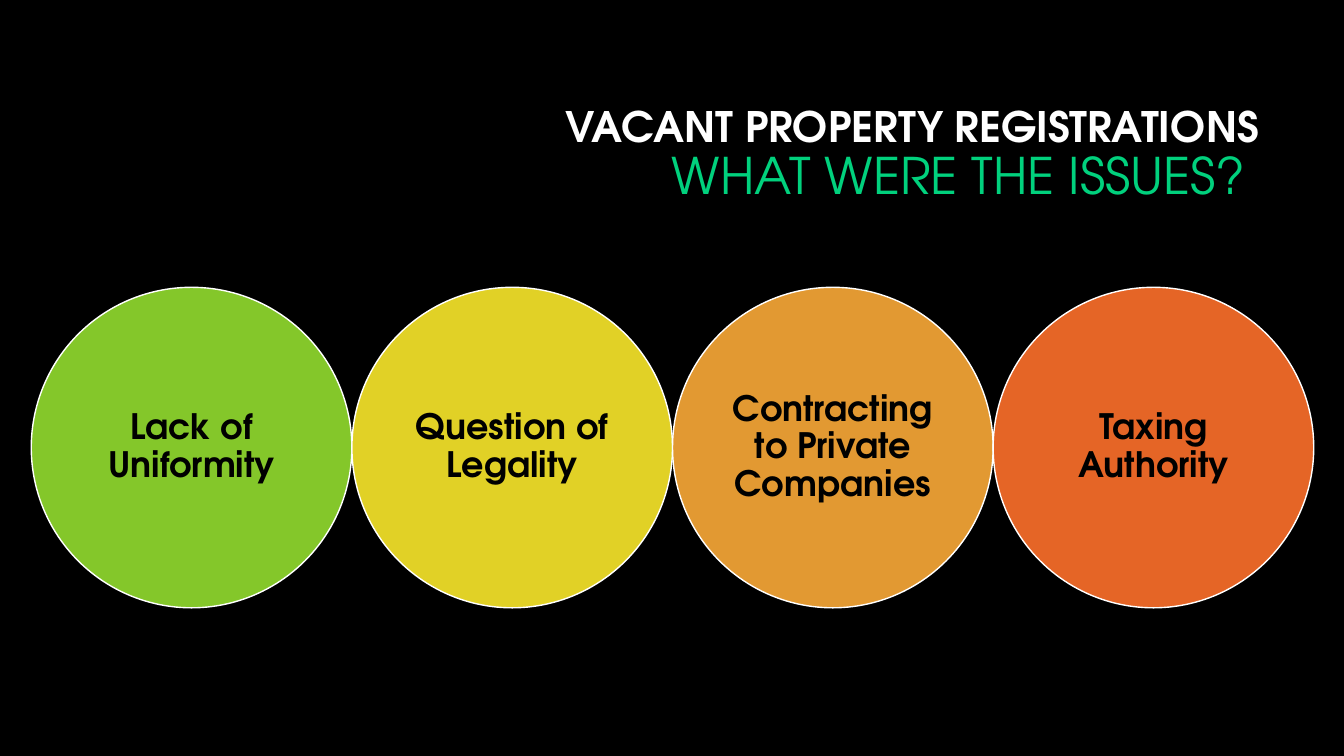
"""Build the slide on the issues with vacant property registrations."""
from pptx import Presentation
from pptx.dml.color import RGBColor
from pptx.enum import shapes, text
from pptx.util import Inches, Pt

BLACK = RGBColor(0x00, 0x00, 0x00)
WHITE = RGBColor(0xFF, 0xFF, 0xFF)
MINT = RGBColor(0x01, 0xD1, 0x7D)
GREEN = RGBColor(0x84, 0xC7, 0x2A)
YELLOW = RGBColor(0xE1, 0xD1, 0x26)
AMBER = RGBColor(0xE2, 0x99, 0x32)
ORANGE = RGBColor(0xE5, 0x65, 0x26)
FONT = "TeX Gyre Adventor"

TITLE = [
    ("VACANT PROPERTY REGISTRATIONS", 30, WHITE, True),
    ("WHAT WERE THE ISSUES? ", 36, MINT, False),
]
ISSUES = [
    ("Lack of Uniformity", GREEN),
    ("Question of\vLegality", YELLOW),
    ("Contracting to Private Companies", AMBER),
    ("Taxing Authority", ORANGE),
]
LEFT, TOP, DIAMETER = 0.31, 2.85, 3.18


def add_title(s):
    """Place the two-line title at the upper right."""
    title = s.shapes.title
    title.left, title.top = Inches(3.17), Inches(0.84)
    title.width, title.height = Inches(9.42), Inches(1.41)
    tf = title.text_frame
    tf.auto_size = text.MSO_AUTO_SIZE.NONE
    tf.vertical_anchor = text.MSO_ANCHOR.MIDDLE
    p = tf.paragraphs[0]
    p.alignment = text.PP_ALIGN.RIGHT
    p.line_spacing = 0.9
    p.font.size = Pt(30)
    for i, (line, size, color, bold) in enumerate(TITLE):
        if i:
            p.add_line_break()
        r = p.add_run()
        r.text = line
        r.font.name, r.font.size, r.font.bold = FONT, Pt(size), bold
        r.font.color.rgb = color


def add_issue(s, i, label, color):
    """Add one circle of the touching row."""
    sp = s.shapes.add_shape(
        shapes.MSO_SHAPE.OVAL, Inches(LEFT + i * DIAMETER), Inches(TOP),
        Inches(DIAMETER), Inches(DIAMETER))
    sp.shadow.inherit = False
    sp.fill.solid()
    sp.fill.fore_color.rgb = color
    sp.line.color.rgb = WHITE
    sp.line.width = Pt(1)
    tf = sp.text_frame
    tf.word_wrap = True
    tf.vertical_anchor = text.MSO_ANCHOR.MIDDLE
    tf.margin_left = tf.margin_right = tf.margin_top = tf.margin_bottom = 0
    p = tf.paragraphs[0]
    p.text = label
    p.alignment = text.PP_ALIGN.CENTER
    p.line_spacing = 0.9
    p.font.name, p.font.size, p.font.bold = FONT, Pt(25), True
    p.font.color.rgb = BLACK


def main():
    """Create and save the presentation."""
    prs = Presentation()
    prs.slide_width, prs.slide_height = Inches(13.33), Inches(7.5)
    s = prs.slides.add_slide(prs.slide_layouts[5])
    s.background.fill.solid()
    s.background.fill.fore_color.rgb = BLACK
    add_title(s)
    for i, (label, color) in enumerate(ISSUES):
        add_issue(s, i, label, color)
    prs.save("out.pptx")


if __name__ == "__main__":
    main()
